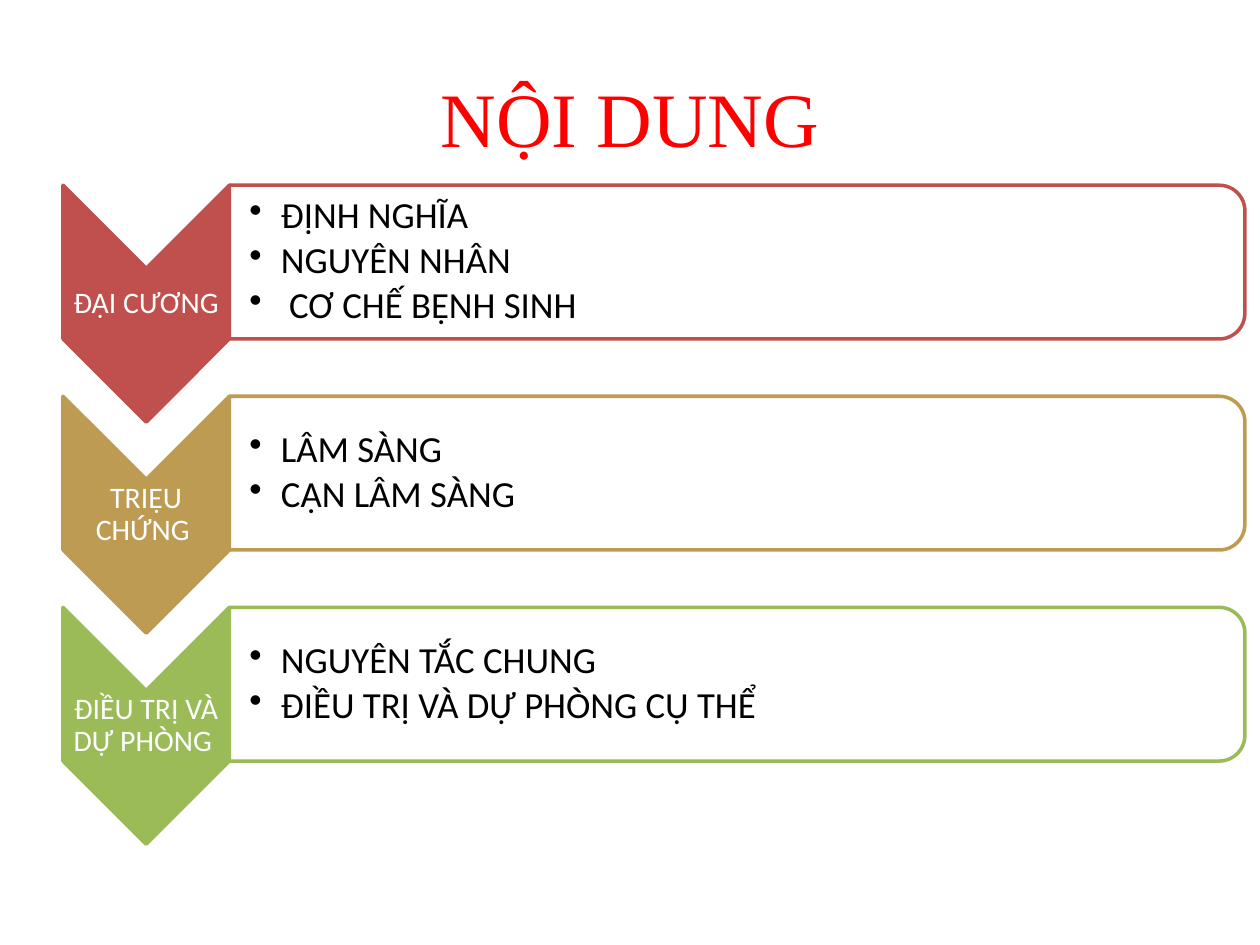
"""Build a contents slide: three chevrons, each pointing past a panel of bullets."""
from dataclasses import dataclass

from lxml.etree import SubElement
from pptx import Presentation
from pptx.dml.color import RGBColor
from pptx.enum.shapes import MSO_SHAPE
from pptx.enum.text import MSO_ANCHOR, PP_ALIGN
from pptx.oxml.ns import qn
from pptx.util import Inches, Pt

COLORS = {
    "title": "FF0000",
    "red": "C0504D",
    "gold": "BD9B53",
    "green": "9BBB59",
    "white": "FFFFFF",
    "black": "000000",
}
SLIDE_WIDTH, SLIDE_HEIGHT = 10, 7.5
FIRST_TOP, ROW_PITCH = 1.47, 1.675
CHEVRON_LEFT, CHEVRON_WIDTH, CHEVRON_HEIGHT = 0.5, 1.32, 1.88
PANEL_LEFT, PANEL_WIDTH, PANEL_HEIGHT = 1.82, 8.06, 1.22
LABEL_HEIGHT, PANEL_INSET = 0.56, 0.06


@dataclass(frozen=True)
class Box:
    left: float
    top: float
    width: float
    height: float

    def lengths(self) -> list:
        return [Inches(n) for n in (self.left, self.top, self.width, self.height)]

    def turned(self) -> "Box":
        """Swap width and height about the same centre."""
        shift = (self.width - self.height) / 2
        return Box(self.left + shift, self.top - shift, self.height, self.width)


@dataclass(frozen=True)
class Section:
    color: str
    label: str
    bullets: tuple[str, ...]


SECTIONS = (
    Section("red", "ĐẠI CƯƠNG", ("ĐỊNH NGHĨA", "NGUYÊN NHÂN", " CƠ CHẾ BỆNH SINH")),
    Section("gold", "TRIỆU CHỨNG ", ("LÂM SÀNG", "CẬN LÂM SÀNG")),
    Section("green", "ĐIỀU TRỊ VÀ DỰ PHÒNG ",
            ("NGUYÊN TẮC CHUNG", "ĐIỀU TRỊ VÀ DỰ PHÒNG CỤ THỂ")),
)


def color(name: str) -> RGBColor:
    return RGBColor.from_string(COLORS[name])


def add_turned_shape(page, kind: MSO_SHAPE, box: Box, fill: str, line: str):
    """Draw a preset turned a quarter clockwise so that it covers the box."""
    shape = page.shapes.add_shape(kind, *box.turned().lengths())
    shape.rotation = 90
    shape.shadow.inherit = False
    shape.fill.solid()
    shape.fill.fore_color.rgb = color(fill)
    shape.line.color.rgb = color(line)
    shape.line.width = Pt(2)
    return shape


def add_text(page, box: Box, lines: tuple[str, ...], size: int, ink: str,
             space_after: float, left_inset: float = 0.01) -> list:
    """Add a centred-height text box and return its paragraphs."""
    frame = page.shapes.add_textbox(*box.lengths()).text_frame
    frame.word_wrap = True
    frame.vertical_anchor = MSO_ANCHOR.MIDDLE
    frame.margin_left = Inches(left_inset)
    frame.margin_top = frame.margin_right = frame.margin_bottom = Inches(0.01)
    frame.text = "\n".join(lines)
    for para in frame.paragraphs:
        para.line_spacing = 0.9
        para.space_after = Pt(space_after)
        para.font.name = "Calibri"
        para.font.size = Pt(size)
        para.font.color.rgb = color(ink)
    return list(frame.paragraphs)


def add_bullet(para) -> None:
    """Give a paragraph a round bullet with a hanging indent."""
    para.level = 1
    properties = para._p.get_or_add_pPr()
    properties.set("marL", str(Inches(0.25)))
    properties.set("indent", str(-Inches(0.25)))
    bullet = SubElement(properties, qn("a:buChar"))
    bullet.set("char", "•")
    properties.insert_element_before(bullet, "a:tabLst", "a:defRPr", "a:extLst")


def add_section(page, section: Section, top: float) -> None:
    chevron = Box(CHEVRON_LEFT, top, CHEVRON_WIDTH, CHEVRON_HEIGHT)
    add_turned_shape(page, MSO_SHAPE.CHEVRON, chevron, section.color, section.color)
    label = Box(CHEVRON_LEFT, top + (CHEVRON_HEIGHT - LABEL_HEIGHT) / 2,
                CHEVRON_WIDTH, LABEL_HEIGHT)
    for para in add_text(page, label, (section.label,), 17, "white", 6):
        para.alignment = PP_ALIGN.CENTER

    panel = Box(PANEL_LEFT, top, PANEL_WIDTH, PANEL_HEIGHT)
    shape = add_turned_shape(page, MSO_SHAPE.ROUND_2_SAME_RECTANGLE, panel,
                             "white", section.color)
    fill = shape._element.spPr.find(qn("a:solidFill"))
    SubElement(fill[0], qn("a:alpha")).set("val", "90000")
    body = Box(PANEL_LEFT, top + PANEL_INSET, PANEL_WIDTH - PANEL_INSET,
               PANEL_HEIGHT - 2 * PANEL_INSET)
    for para in add_text(page, body, section.bullets, 21, "black", 3, 0.16):
        add_bullet(para)


def add_title(page, text: str) -> None:
    title = page.shapes.title
    title.left, title.top, title.width, title.height = Box(0.5, 0.3, 9, 1.25).lengths()
    title.text_frame.text = text
    title.text_frame.vertical_anchor = MSO_ANCHOR.MIDDLE
    para = title.text_frame.paragraphs[0]
    para.alignment = PP_ALIGN.CENTER
    para.font.name = "Times New Roman"
    para.font.size = Pt(44)
    para.font.color.rgb = color("title")


def main() -> None:
    deck = Presentation()
    deck.slide_width, deck.slide_height = Inches(SLIDE_WIDTH), Inches(SLIDE_HEIGHT)
    page = deck.slides.add_slide(deck.slide_layouts[5])
    add_title(page, "NỘI DUNG")
    for row, section in enumerate(SECTIONS):
        add_section(page, section, FIRST_TOP + row * ROW_PITCH)
    deck.save("out.pptx")


if __name__ == "__main__":
    main()
